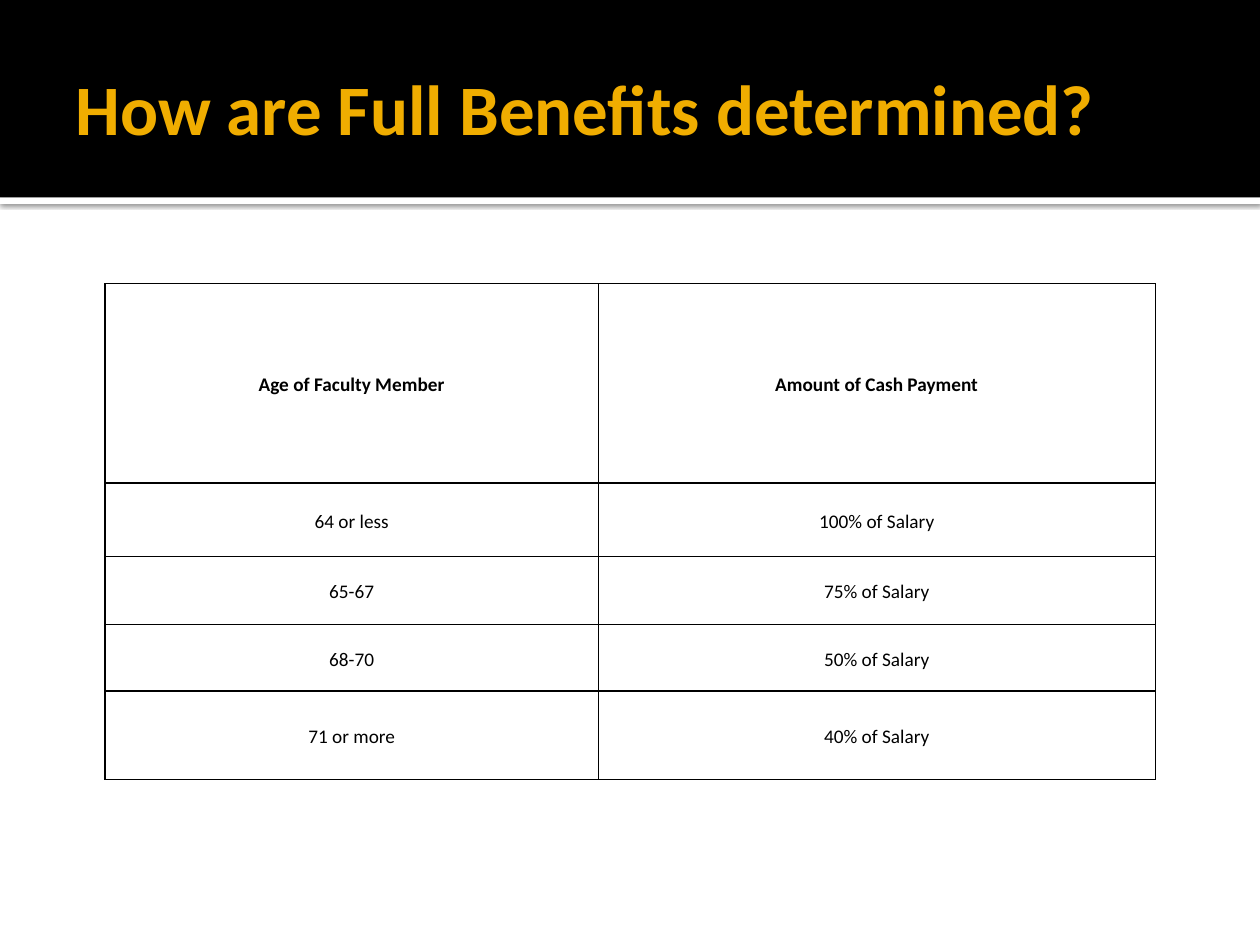
"""Build the slide on how full benefits are determined."""
from lxml import etree
from pptx import Presentation, util as u
from pptx.dml import color
from pptx.enum import shapes, text
from pptx.oxml import ns

BLACK, WHITE, AMBER = "000000", "FFFFFF", "F0AD00"
WIDTH, HEIGHT = u.Cm(25.4), u.Cm(19.05)


def rgb(value):
    return color.RGBColor.from_string(value)


def add_xml(parent, tag, **attributes):
    return etree.SubElement(parent, ns.qn(tag), attributes)


class SlideBuilder:
    font = "Calibri"

    def __init__(self, slide):
        self.slide = slide

    def style_runs(self, paragraph, size, colour, bold):
        for run in paragraph.runs:
            run.font.name = self.font
            run.font.size = u.Pt(size)
            run.font.bold = bold
            run.font.color.rgb = rgb(colour)

    def bar(self, top, height, colour):
        shape = self.slide.shapes.add_shape(
            shapes.MSO_SHAPE.RECTANGLE, 0, top, WIDTH, height)
        shape.fill.solid()
        shape.fill.fore_color.rgb = rgb(colour)
        shape.line.fill.background()
        shape.shadow.inherit = False
        return shape

    def shadow(self, shape, blur, distance, opacity):
        effects = shape._element.spPr.find(ns.qn("a:effectLst"))
        outer = add_xml(effects, "a:outerShdw", blurRad=str(u.Pt(blur)),
                        dist=str(u.Pt(distance)), dir="5400000",
                        algn="tl", rotWithShape="0")
        shade = add_xml(outer, "a:srgbClr", val=BLACK)
        add_xml(shade, "a:alpha", val=str(opacity * 1000))

    def title(self, wording, left, top, width, height):
        shape = self.slide.shapes.add_textbox(left, top, width, height)
        frame = shape.text_frame
        frame.word_wrap = True
        frame.vertical_anchor = text.MSO_ANCHOR.MIDDLE
        frame.margin_left = u.Cm(0.25)
        frame.margin_right = frame.margin_top = frame.margin_bottom = u.Cm(0.13)
        frame.text = wording
        self.style_runs(frame.paragraphs[0], 40.5, AMBER, True)

    def borders(self, cell):
        properties = cell._tc.get_or_add_tcPr()
        for side in "LRTB":
            line = add_xml(properties, f"a:ln{side}", w=str(u.Pt(1)))
            fill = add_xml(line, "a:solidFill")
            add_xml(fill, "a:srgbClr", val=BLACK)

    def cell(self, cell, wording, bold):
        self.borders(cell)
        cell.fill.background()
        cell.vertical_anchor = text.MSO_ANCHOR.MIDDLE
        cell.margin_left = cell.margin_right = u.Cm(0.18)
        cell.margin_top = cell.margin_bottom = 0
        cell.text_frame.text = wording
        paragraph = cell.text_frame.paragraphs[0]
        paragraph.alignment = text.PP_ALIGN.CENTER
        paragraph.line_spacing = 1.15
        self.style_runs(paragraph, 11, BLACK, bold)

    def table(self, rows, left, top, widths, heights):
        table = self.slide.shapes.add_table(
            len(rows), len(widths), left, top, sum(widths), sum(heights)).table
        table.first_row = table.horz_banding = False
        for column, width in zip(table.columns, widths):
            column.width = width
        for index, (row, height) in enumerate(zip(table.rows, heights)):
            row.height = height
            for cell, wording in zip(row.cells, rows[index]):
                self.cell(cell, wording, bold=index == 0)


def main():
    presentation = Presentation()
    presentation.slide_width, presentation.slide_height = WIDTH, HEIGHT
    builder = SlideBuilder(
        presentation.slides.add_slide(presentation.slide_layouts[6]))

    header_height = u.Cm(3.98)
    strip = builder.bar(header_height, u.Cm(0.13), WHITE)
    builder.shadow(strip, blur=2.5, distance=0.8, opacity=60)
    builder.bar(0, header_height, BLACK)
    builder.title("How are Full Benefits determined?",
                  u.Cm(1.27), u.Cm(0.43), u.Cm(22.86), u.Cm(3.48))

    payments = [
        ("Age of Faculty Member", "Amount of Cash Payment"),
        ("64 or less", "100% of Salary"),
        ("65-67", "75% of Salary"),
        ("68-70", "50% of Salary"),
        ("71 or more", "40% of Salary"),
    ]
    builder.table(payments, u.Cm(2.12), u.Cm(5.72),
                  widths=[u.Cm(9.94), u.Cm(11.23)],
                  heights=[u.Cm(h) for h in (4.02, 1.48, 1.37, 1.34, 1.78)])
    presentation.save("out.pptx")


if __name__ == "__main__":
    main()
